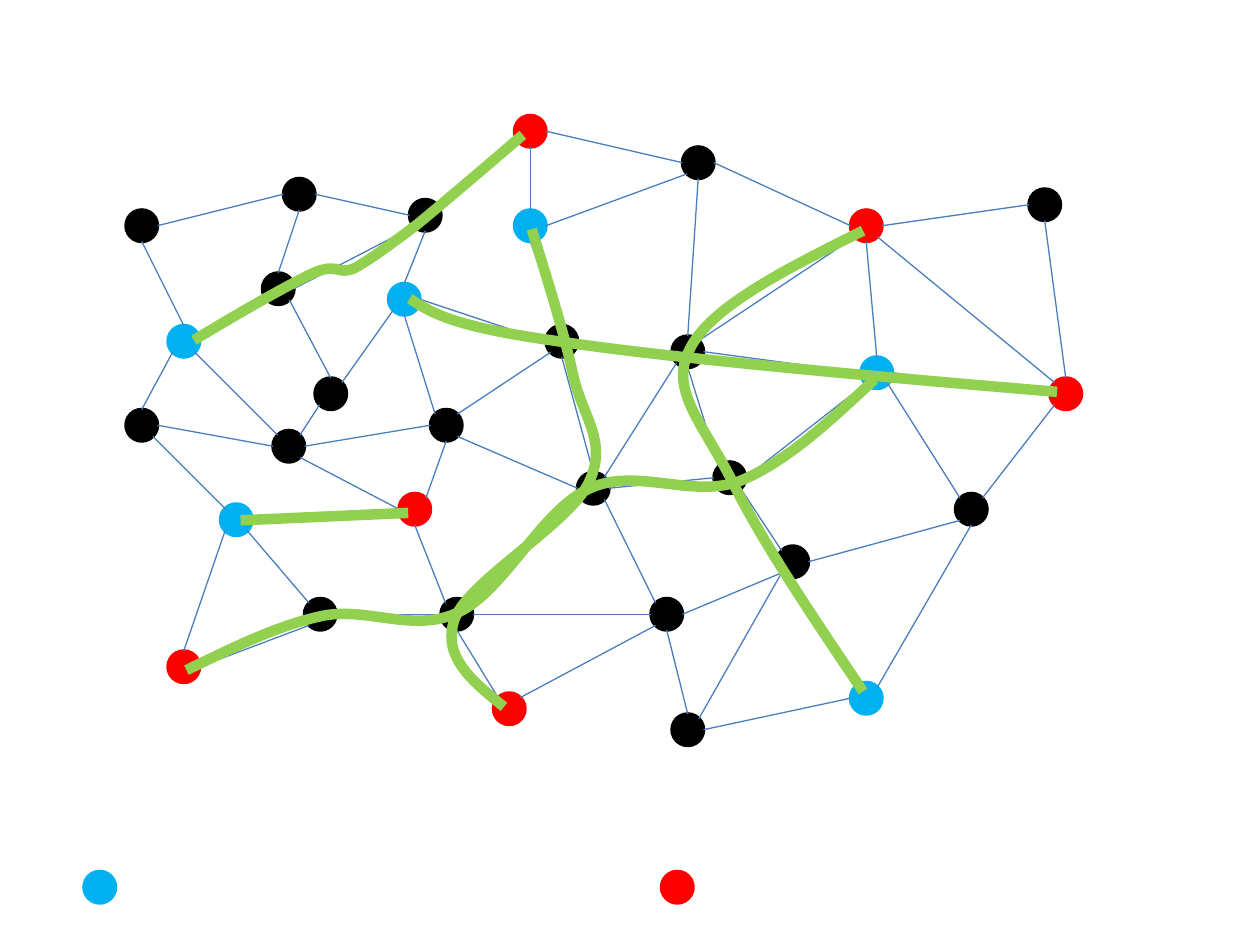
"""Draw a peer network whose highlighted routes join blue nodes to red nodes."""
from dataclasses import dataclass
from math import cos, pi, sin

from lxml.etree import SubElement
from pptx import Presentation
from pptx.dml.color import RGBColor
from pptx.enum.shapes import MSO_CONNECTOR as Connector, MSO_SHAPE as Shape
from pptx.oxml.ns import qn
from pptx.util import Cm, Pt


@dataclass(frozen=True)
class Theme:
    """Colours, line widths and grid of the network."""
    relay: RGBColor = RGBColor.from_string("000000")
    source: RGBColor = RGBColor.from_string("00B0F0")
    target: RGBColor = RGBColor.from_string("FF0000")
    link: RGBColor = RGBColor.from_string("4B7EBC")
    route: RGBColor = RGBColor.from_string("92D050")
    outline: float = 2
    link_width: float = 0.75
    route_width: float = 6
    grid: float = 2.54 / 12
    node_cells: int = 3


THEME = Theme()
SITES = ("N", "NW", "W", "SW", "S", "SE", "E", "NE")

NODES = {
    "A": (12, 20, "relay"), "B": (16, 31, "source"), "C": (12, 39, "relay"),
    "D": (29, 57, "relay"), "E": (30, 36, "relay"), "F": (26, 41, "relay"),
    "G": (21, 48, "source"), "H": (38, 47, "target"), "I": (16, 62, "target"),
    "J": (49, 20, "source"), "K": (27, 17, "relay"), "L": (64, 68, "relay"),
    "M": (49, 11, "target"), "N": (65, 14, "relay"), "O": (25, 26, "relay"),
    "P": (37, 27, "source"), "Q": (39, 19, "relay"), "R": (41, 39, "relay"),
    "S": (98, 18, "relay"), "T": (81, 20, "target"), "U": (82, 34, "source"),
    "V": (52, 31, "relay"), "W": (42, 57, "relay"), "X": (68, 44, "relay"),
    "Y": (55, 45, "relay"), "Z": (81, 65, "source"), "a": (47, 66, "target"),
    "b": (91, 47, "relay"), "c": (64, 32, "relay"), "d": (74, 52, "relay"),
    "e": (100, 36, "target"), "f": (62, 57, "relay"),
}
LEGEND = ((8, 83, "source"), (63, 83, "target"))

LINKS = """
A.E-K.W B.E-O.SW B.SW-C.N B.SE-F.NW O.N-K.S K.E-Q.W Q.NE-M.SW J.N-M.S
P.E-V.W V.E-c.W c.E-U.W N.S-c.N T.S-U.N T.E-S.W N.E-T.W M.E-N.W
V.S-Y.N R.NE-V.SW F.E-R.W R.S-H.NE F.SE-H.W G.SW-I.N C.SE-G.NW H.S-W.NW
W.NE-Y.SW E.NE-P.SW E.SW-F.NE D.E-W.W G.SE-D.NW I.E-D.SW Y.E-X.W X.E-U.SW
X.SE-d.NW f.E-d.SW f.S-L.N d.E-b.SW U.E-e.W T.SE-e.NW S.S-e.N b.NE-e.SW
b.S-Z.NE L.E-Z.W d.S-Z.NW Y.SE-f.NW W.S-a.NW a.NE-f.SW J.S-V.N Q.S-P.N
O.E-Q.SW A.S-B.N U.SE-b.NW c.NE-T.SW c.S-X.NW L.NE-d.SW Y.NE-c.SW G.E-H.W
J.E-N.SW R.SE-Y.W W.E-f.W O.SE-E.N C.E-F.W P.S-R.NW
""".split()

ROUTES = (
    ((3.91, 6.86), (4.83, 6.3), (5.77, 5.77), (6.3, 5.51), (6.83, 5.28),
     (6.78, 5.56), (7.14, 5.41), (7.47, 5.23), (7.8, 4.98), (8.38, 4.55),
     (8.94, 4.09), (9.75, 3.4), (10.54, 2.72)),
    ((8.26, 6.02), (8.69, 6.3), (9.09, 6.58), (11.25, 6.88), (13.44, 7.21),
     (17.37, 7.57), (21.31, 7.9)),
    ((17.4, 13.94), (16.36, 12.4), (15.32, 10.85), (14.76, 9.7), (14.17, 8.53),
     (13.46, 7.85), (13.92, 7.01), (14.35, 6.17), (15.88, 5.41), (17.4, 4.65)),
    ((17.63, 7.65), (16.74, 8.48), (15.85, 9.32), (14.91, 9.7), (13.94, 10.06),
     (12.8, 9.4), (11.86, 9.86), (10.92, 10.29), (10.16, 11.91), (9.25, 12.34),
     (8.36, 12.78), (7.39, 12.22), (6.48, 12.42), (5.56, 12.62), (4.65, 13.08),
     (3.76, 13.51)),
    ((4.85, 10.49), (8.23, 10.34)),
)
LAST_ROUTE = (
    (10.72, 4.62), (11.05, 5.69), (11.38, 6.73), (11.56, 7.59), (11.76, 8.43),
    (12.27, 8.92), (11.86, 9.75), (11.46, 10.57), (9.45, 11.71), (9.17, 12.47),
    (8.89, 13.23), (9.53, 13.74), (10.16, 14.25))


def add_node(slide, column, row, role):
    """Draw one round node at a grid cell in the colour of its role."""
    size = Cm(THEME.node_cells * THEME.grid)
    node = slide.shapes.add_shape(
        Shape.OVAL, Cm(column * THEME.grid), Cm(row * THEME.grid), size, size)
    node.shadow.inherit = False
    node.fill.solid()
    node.fill.fore_color.rgb = node.line.color.rgb = getattr(THEME, role)
    node.line.width = Pt(THEME.outline)
    return node


def site_position(node, site):
    """Return the point on a node's rim for a site counted from the top."""
    angle = site * pi / 4
    radius = node.width / 2
    return (round(node.left + radius * (1 - sin(angle))),
            round(node.top + radius * (1 - cos(angle))))


def add_link(slide, nodes, link):
    """Join two nodes at the rim sites that the link names."""
    ends = [end.split(".") for end in link.split("-")]
    joints = [(nodes[name], SITES.index(site)) for name, site in ends]
    start, finish = (site_position(*joint) for joint in joints)
    edge = slide.shapes.add_connector(Connector.STRAIGHT, *start, *finish)
    edge.line.color.rgb = THEME.link
    edge.line.width = Pt(THEME.link_width)
    SubElement(edge._element.spPr, qn("a:effectLst"))
    glue = edge._element.nvCxnSpPr.cNvCxnSpPr
    for tag, (node, site) in zip(("a:stCxn", "a:endCxn"), joints):
        SubElement(glue, qn(tag), id=str(node.shape_id), idx=str(site))


def bend(route):
    """Turn every three straight legs of a route into one Bézier curve."""
    outline = route._element.find(".//" + qn("a:path"))
    legs = outline.findall(qn("a:lnTo"))
    for first in range(0, len(legs), 3):
        curve = SubElement(outline, qn("a:cubicBezTo"))
        for leg in legs[first:first + 3]:
            curve.append(leg[0])
            outline.remove(leg)


def add_route(slide, points):
    """Draw one thick route through its start, control and end points."""
    start, *others = [(Cm(x), Cm(y)) for x, y in points]
    builder = slide.shapes.build_freeform(*start)
    builder.add_line_segments(others, close=False)
    route = builder.convert_to_shape()
    if len(others) > 1:
        bend(route)
    route.shadow.inherit = False
    route.fill.background()
    route.line.color.rgb = THEME.route
    route.line.width = Pt(THEME.route_width)


def main():
    """Build the network slide and save it."""
    deck = Presentation()
    deck.slide_width, deck.slide_height = Cm(25.4), Cm(19.05)
    slide = deck.slides.add_slide(deck.slide_layouts[6])
    nodes = {name: add_node(slide, *place) for name, place in NODES.items()}
    for link in LINKS:
        add_link(slide, nodes, link)
    for points in ROUTES:
        add_route(slide, points)
    for place in LEGEND:
        add_node(slide, *place)
    add_route(slide, LAST_ROUTE)
    deck.save("out.pptx")


if __name__ == "__main__":
    main()
